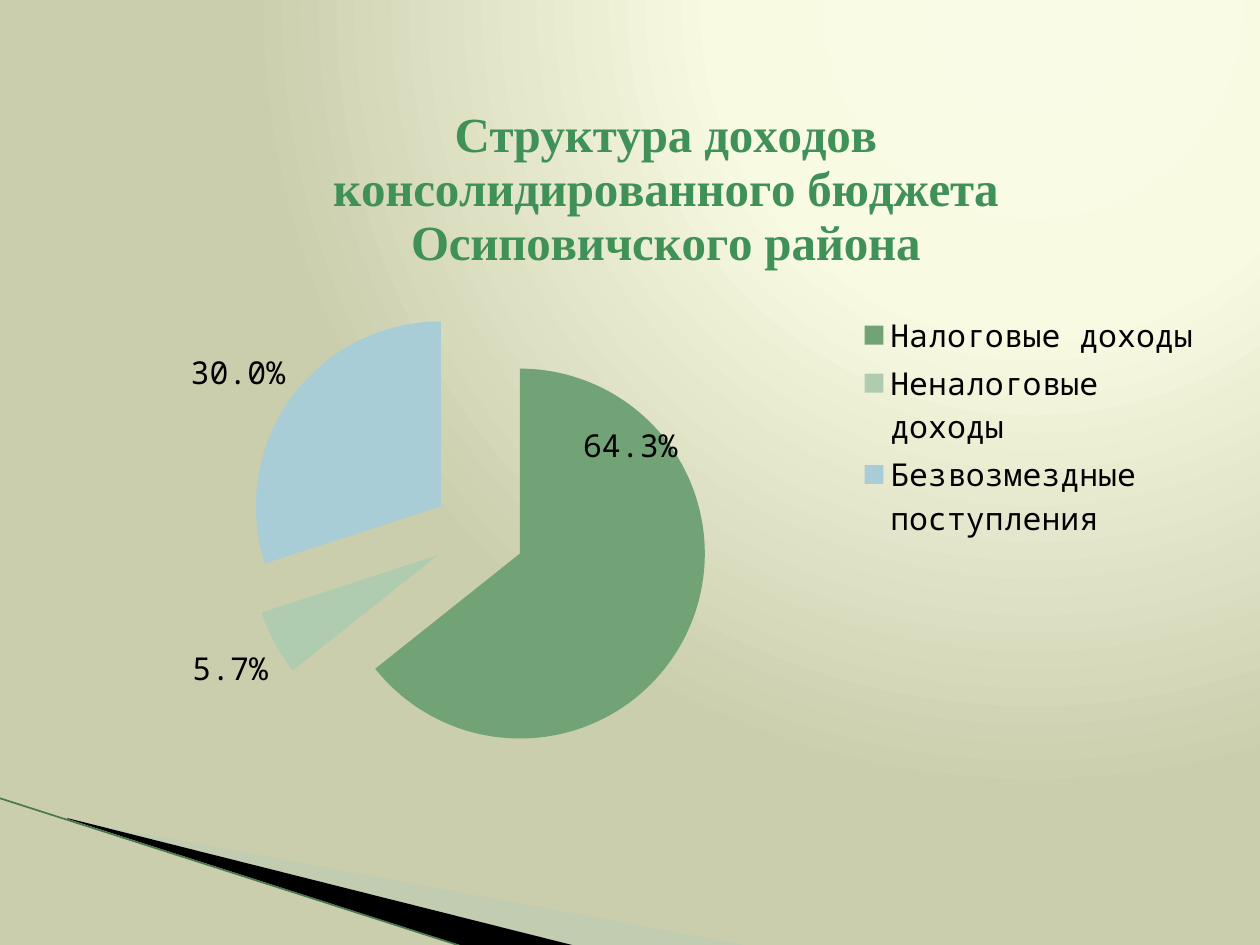
from lxml import etree
from pptx import Presentation
from pptx.chart.data import CategoryChartData
from pptx.dml.color import RGBColor
from pptx.enum.chart import XL_CHART_TYPE, XL_LABEL_POSITION, XL_LEGEND_POSITION
from pptx.enum.shapes import MSO_CONNECTOR
from pptx.oxml import parse_xml
from pptx.oxml.ns import nsdecls, qn
from pptx.util import Pt

PIE = XL_CHART_TYPE.PIE
OUTSIDE_END = XL_LABEL_POSITION.OUTSIDE_END
LEGEND_RIGHT = XL_LEGEND_POSITION.RIGHT
STRAIGHT = MSO_CONNECTOR.STRAIGHT

PX = 914400 / 126
COLORS = {
    "glow": "F9FBE7", "glow_edge": "F8FAE2", "sand": "CBCEAD",
    "pale_wedge": "B3CBB5", "black": "000000", "edge_line": "4A7650",
    "title": "3F9158", "tax": "72A376", "non_tax": "B0CCB0", "grants": "A8CDD7",
}
BODY_FONT, TITLE_FONT = "Noto Sans Mono", "Times New Roman"
PERCENT = "0.0%"
TITLE = "Структура доходов консолидированного бюджета Осиповичского района"
INCOME = [
    ("Налоговые доходы", 0.643, "tax"),
    ("Неналоговые доходы", 0.057, "non_tax"),
    ("Безвозмездные поступления", 0.3, "grants"),
]


def rgb(name):
    return RGBColor.from_string(COLORS[name])


def manual_layout(**settings):
    """Return a c:layout holding the given c:manualLayout values, in order."""
    layout = parse_xml(f"<c:layout {nsdecls('c')}><c:manualLayout/></c:layout>")
    for tag, value in settings.items():
        etree.SubElement(layout[0], qn(f"c:{tag}")).set("val", str(value))
    return layout


prs = Presentation()
prs.slide_width, prs.slide_height = round(1260 * PX), round(945 * PX)
slide = prs.slides.add_slide(prs.slide_layouts[6])

# Background glow in the upper right
slide.background.fill.gradient()
gradient = slide.element.find(".//" + qn("a:gradFill"))
stops = "".join(
    f'<a:gs pos="{percent * 1000}"><a:srgbClr val="{COLORS[name]}"/></a:gs>'
    for percent, name in [(0, "glow"), (40, "glow_edge"), (100, "sand")]
)
gradient.getparent().replace(gradient, parse_xml(
    f'<a:gradFill {nsdecls("a")} rotWithShape="1"><a:gsLst>{stops}</a:gsLst>'
    '<a:path path="circle"><a:fillToRect l="65000" t="0" r="0" b="98000"/></a:path>'
    "</a:gradFill>"
))

# Wedges in the lower left corner
wedges = [
    ("pale_wedge", 40, [(69, 820), (750, 946), (575, 946), (69, 819)]),
    ("black", 100, [(67, 818), (576, 946), (469, 948), (68, 819)]),
]
for color, opacity, corners in wedges:
    builder = slide.shapes.build_freeform(*corners[0], scale=PX)
    builder.add_line_segments(corners[1:], close=True)
    wedge = builder.convert_to_shape()
    wedge.shadow.inherit = False
    wedge.fill.solid()
    wedge.fill.fore_color.rgb = rgb(color)
    wedge.line.fill.background()
    if opacity < 100:
        fill_color = wedge.element.spPr.find(".//" + qn("a:srgbClr"))
        etree.SubElement(fill_color, qn("a:alpha")).set("val", str(opacity * 1000))

edge = slide.shapes.add_connector(STRAIGHT, *(round(v * PX) for v in (-1, 798, 467, 948)))
edge.line.color.rgb = rgb("edge_line")
edge.line.width = Pt(0.95)
etree.SubElement(edge.element.spPr, qn("a:effectLst"))

# Income pie
income_data = CategoryChartData(number_format=PERCENT)
income_data.categories = [category for category, _, _ in INCOME]
income_data.add_series(TITLE, [share for _, share, _ in INCOME])
chart = slide.shapes.add_chart(
    PIE, *(round(v * PX) for v in (115, 66, 1101, 714)), income_data
).chart
chart.font.name = BODY_FONT
chart.font.size = Pt(18)
chart.font.color.rgb = rgb("black")

chart.has_title = True
title_run = chart.chart_title.text_frame.paragraphs[0].add_run()
title_run.text = TITLE
title_run.font.name = TITLE_FONT
title_run.font.size = Pt(28)
title_run.font.bold = True
title_run.font.color.rgb = rgb("title")

chart.has_legend = True
chart.legend.position = LEGEND_RIGHT
chart.legend.include_in_layout = False

plot = chart.plots[0]
plot.vary_by_categories = True
income = plot.series[0]
for index, (_, _, color) in enumerate(INCOME):
    slice_fill = income.points[index].format.fill
    slice_fill.solid()
    slice_fill.fore_color.rgb = rgb(color)
explosion = parse_xml(f'<c:explosion {nsdecls("c")} val="25"/>')
income.points[0].format.fill  # slices exist before the explosion is placed
income._element.find(qn("c:dPt")).addprevious(explosion)

labels = income.data_labels
labels.show_value = True
labels.number_format = PERCENT
labels.number_format_is_linked = False
labels.position = OUTSIDE_END
labels.font.name = BODY_FONT
labels.font.size = Pt(18)
labels.font.color.rgb = rgb("black")

# The tax label is moved up into its slice
tax_label = income.points[0].data_label
tax_label.position = OUTSIDE_END
tax_label.font.name = BODY_FONT
tax_label.font.size = Pt(18)
tax_label.font.color.rgb = rgb("black")
tax_index = income._element.find(f".//{qn('c:dLbl')}/{qn('c:idx')}")
tax_index.addnext(parse_xml(
    f'<c:numFmt {nsdecls("c")} formatCode="{PERCENT}" sourceLinked="0"/>'
))
tax_index.addnext(manual_layout(x=-0.1, y=-0.3))
for leader_lines in income._element.iter(qn("c:showLeaderLines")):
    leader_lines.set("val", "0")

# Places of the chart parts, as shares of the chart area
chart_xml = chart._chartSpace.chart
places = [
    ("title", "tx", dict(xMode="edge", yMode="edge", x=0.19, y=0.04)),
    ("legend", "legendPos", dict(xMode="edge", yMode="edge", x=0.67, y=0.34, w=0.32, h=0.33)),
    ("plotArea", None, dict(layoutTarget="inner", xMode="edge", yMode="edge",
                            x=0.12, y=0.33, w=0.42, h=0.65)),
]
for part_tag, previous_tag, settings in places:
    part = chart_xml.find(qn(f"c:{part_tag}"))
    for old_layout in part.findall(qn("c:layout")):
        part.remove(old_layout)
    if previous_tag:
        part.find(qn(f"c:{previous_tag}")).addnext(manual_layout(**settings))
    else:
        part.insert(0, manual_layout(**settings))

prs.save("out.pptx")
